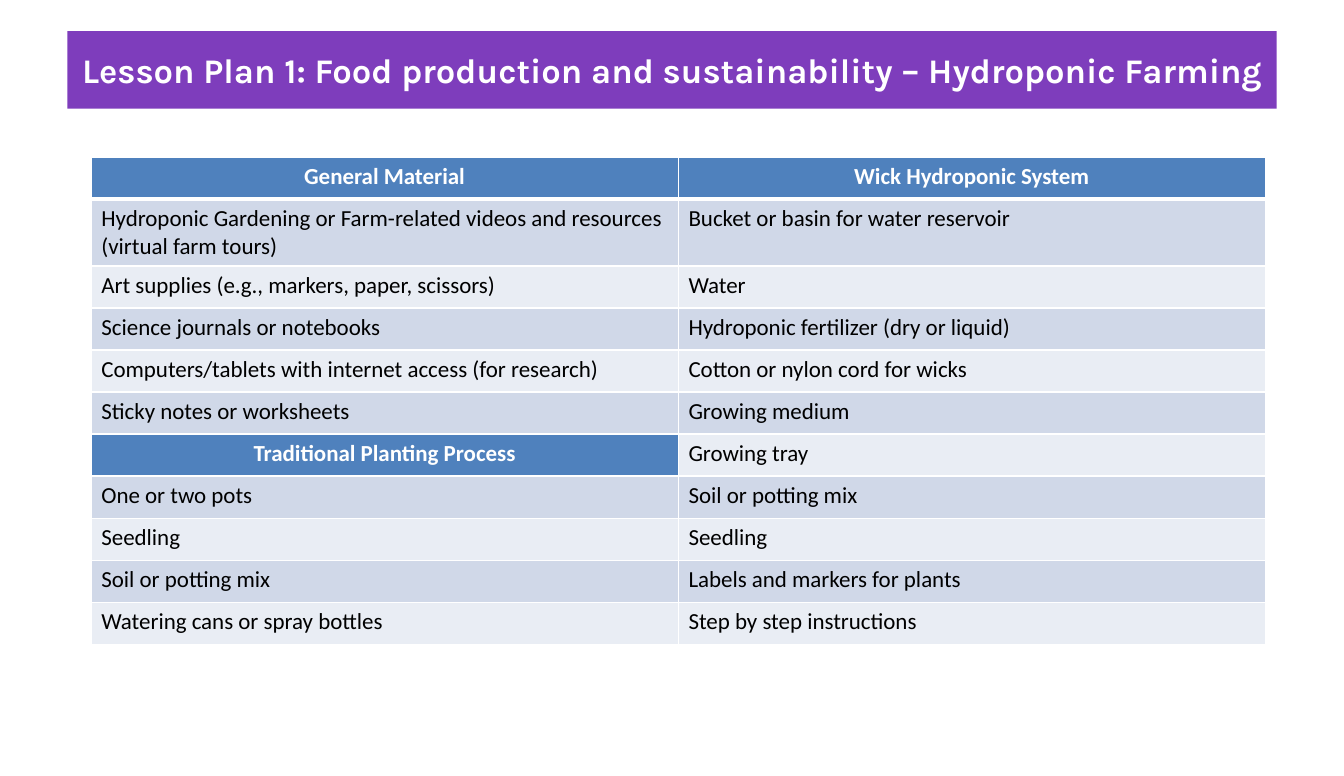
from lxml.etree import SubElement
from pptx import Presentation
from pptx.dml.color import RGBColor
from pptx.enum.text import MSO_ANCHOR, MSO_AUTO_SIZE, PP_ALIGN
from pptx.oxml.ns import qn
from pptx.util import Inches, Pt

PURPLE = RGBColor(0x7E, 0x3D, 0xBC)
BLUE = RGBColor(0x4F, 0x81, 0xBD)
DARK_BAND = RGBColor(0xD0, 0xD8, 0xE8)
LIGHT_BAND = RGBColor(0xE9, 0xED, 0xF4)
WHITE = RGBColor(0xFF, 0xFF, 0xFF)
BLACK = RGBColor(0x00, 0x00, 0x00)

HEADINGS = {"General Material", "Wick Hydroponic System", "Traditional Planting Process"}
MATERIALS = [
    ("General Material", "Wick Hydroponic System"),
    ("Hydroponic Gardening or Farm-related videos and resources (virtual farm tours)",
     "Bucket or basin for water reservoir"),
    ("Art supplies (e.g., markers, paper, scissors)", "Water"),
    ("Science journals or notebooks", "Hydroponic fertilizer (dry or liquid)"),
    ("Computers/tablets with internet access (for research)", "Cotton or nylon cord for wicks"),
    ("Sticky notes or worksheets", "Growing medium"),
    ("Traditional Planting Process", "Growing tray"),
    ("One or two pots", "Soil or potting mix"),
    ("Seedling", "Seedling"),
    ("Soil or potting mix", "Labels and markers for plants"),
    ("Watering cans or spray bottles", "Step by step instructions"),
]


def add_border(cell, side, points):
    line = SubElement(cell._tc.get_or_add_tcPr(), qn(f"a:ln{side}"), w=str(Pt(points)))
    SubElement(SubElement(line, qn("a:solidFill")), qn("a:srgbClr"), val=str(WHITE))


presentation = Presentation()
presentation.slide_width = Inches(12.99)
presentation.slide_height = Inches(7.5)
slide = presentation.slides.add_slide(presentation.slide_layouts[5])

title = slide.shapes.title
title.left, title.top = Inches(0.65), Inches(0.3)
title.width, title.height = Inches(11.69), Inches(0.75)
title.fill.solid()
title.fill.fore_color.rgb = PURPLE
title_frame = title.text_frame
title_frame.text = "Lesson Plan 1: Food production and sustainability – Hydroponic Farming"
title_frame.word_wrap = True
title_frame.auto_size = MSO_AUTO_SIZE.NONE
title_frame.vertical_anchor = MSO_ANCHOR.MIDDLE
paragraph = title_frame.paragraphs[0]
paragraph.alignment = PP_ALIGN.CENTER
paragraph.font.name = "Karla"
paragraph.font.size = Pt(24)
paragraph.font.bold = True
paragraph.font.color.rgb = WHITE

table = slide.shapes.add_table(
    len(MATERIALS), 2, Inches(0.88), Inches(1.52), Inches(11.35), Inches(4.47)
).table
table.rows[1].height = Inches(0.63)

for row, texts in enumerate(MATERIALS):
    for column, text in enumerate(texts):
        cell = table.cell(row, column)
        is_heading = text in HEADINGS
        add_border(cell, "L", 1)
        add_border(cell, "R", 1)
        add_border(cell, "T", 3 if row == 1 else 1)
        add_border(cell, "B", 3 if row == 0 else 1)
        cell.fill.solid()
        band = DARK_BAND if row % 2 else LIGHT_BAND
        cell.fill.fore_color.rgb = BLUE if is_heading else band
        cell.text = text
        paragraph = cell.text_frame.paragraphs[0]
        paragraph.alignment = PP_ALIGN.CENTER if is_heading else PP_ALIGN.LEFT
        paragraph.font.name = "Calibri"
        paragraph.font.size = Pt(16)
        paragraph.font.bold = is_heading
        paragraph.font.color.rgb = WHITE if is_heading else BLACK

presentation.save("out.pptx")
